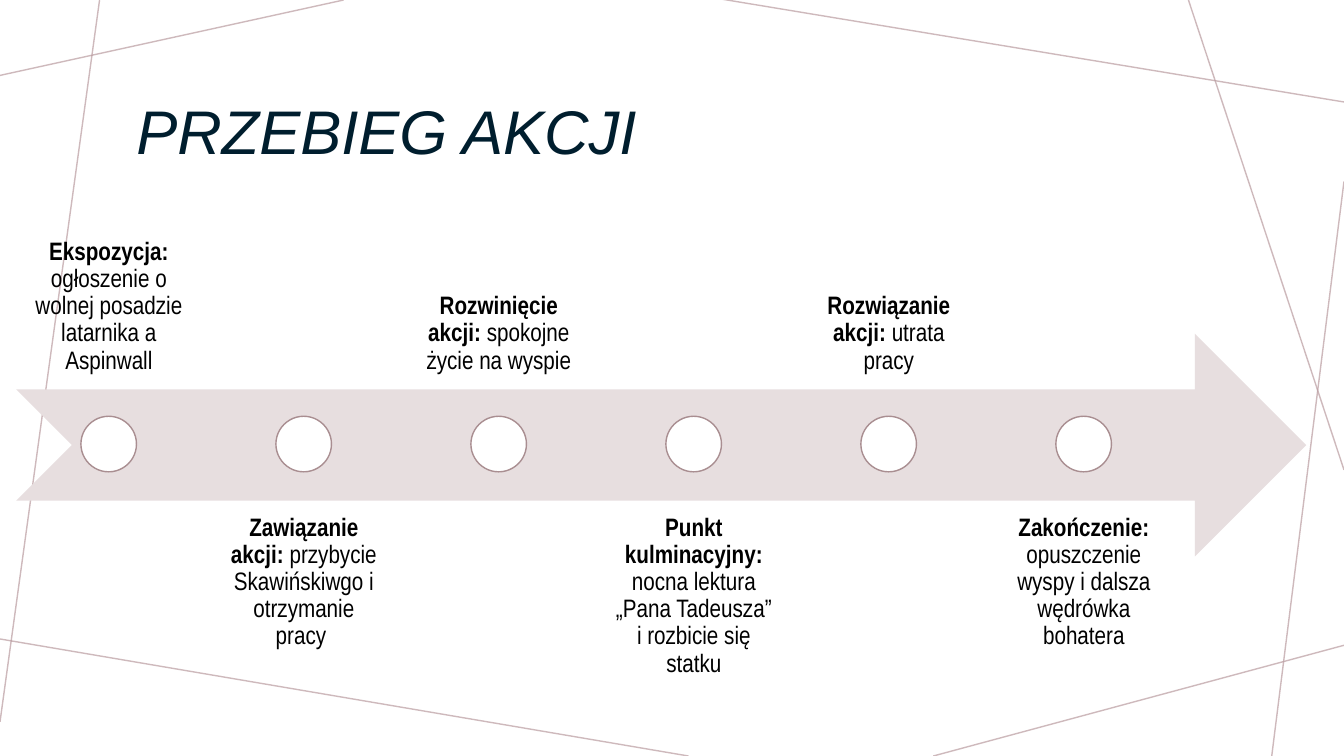
from lxml import etree
from pptx import Presentation
from pptx.dml.color import RGBColor
from pptx.enum.shapes import MSO_CONNECTOR, MSO_SHAPE
from pptx.enum.text import MSO_ANCHOR, MSO_AUTO_SIZE, PP_ALIGN
from pptx.oxml.ns import qn
from pptx.util import Cm, Pt

STRAIGHT = MSO_CONNECTOR.STRAIGHT
ARROW, OVAL = MSO_SHAPE.NOTCHED_RIGHT_ARROW, MSO_SHAPE.OVAL
TOP, MIDDLE, BOTTOM = MSO_ANCHOR.TOP, MSO_ANCHOR.MIDDLE, MSO_ANCHOR.BOTTOM
LEFT, CENTER = PP_ALIGN.LEFT, PP_ALIGN.CENTER
NO_FIT = MSO_AUTO_SIZE.NONE

WIDTH, HEIGHT = 33.87, 19.05
PITCH = 4.914
MARGIN = 0.41
BOX_W, BOX_H = 4.67, 5.61
DOT_LEFT, DOT_TOP, DOT_SIZE = 2.04, 10.49, 1.4

BACKGROUND_LINES = [
    (8.66, 0, 0, 1.9),
    (2.51, 0, 0, 18.19),
    (17.35, HEIGHT, -0.13, 16.08),
    (WIDTH, 16.26, 23.52, HEIGHT),
    (WIDTH, 4.57, 32.05, HEIGHT),
    (WIDTH, 11.84, 29.95, 0),
    (WIDTH, 2.57, 18.14, -0.03),
]
STAGES = [
    ("Ekspozycja: ", "ogłoszenie o wolnej posadzie latarnika a Aspinwall"),
    ("Zawiązanie akcji:", " przybycie Skawińskiwgo i otrzymanie pracy "),
    ("Rozwinięcie akcji: ", "spokojne życie na wyspie"),
    ("Punkt kulminacyjny:", " nocna lektura „Pana Tadeusza” i rozbicie się statku"),
    ("Rozwiązanie akcji: ", "utrata pracy"),
    ("Zakończenie: ", "opuszczenie wyspy i dalsza wędrówka bohatera"),
]


def rgb(value):
    """Return the colour for a hex string."""
    return RGBColor.from_string(value)


class SlideBuilder:
    """Holds the style and the current slide, and draws each kind of element."""

    title_font = {"size": Pt(44), "name": "Arial", "italic": True, "bold": False}
    label_font = {"size": Pt(18), "name": "Arial Narrow"}
    title_color, label_color = "001E2E", "000000"
    line_color, arrow_color = "BA9CA0", "E7DEDF"
    dot_color, ring_color = "FFFFFF", "A98E91"

    def __init__(self, prs):
        """Add a title-only slide with a white background."""
        self.s = prs.slides.add_slide(prs.slide_layouts[5])
        fill = self.s.background.fill
        fill.solid()
        fill.fore_color.rgb = rgb("FFFFFF")

    def run(self, p, text, color, **formats):
        """Add a formatted run to a paragraph."""
        r = p.add_run()
        r.text = text
        for name, value in formats.items():
            setattr(r.font, name, value)
        r.font.color.rgb = rgb(color)

    def paragraph(self, tf, align, anchor, inset=None):
        """Format a text frame and return its first paragraph."""
        formats = {"word_wrap": True, "auto_size": NO_FIT, "vertical_anchor": anchor}
        if inset is not None:
            for side in ("left", "top", "right", "bottom"):
                formats[f"margin_{side}"] = Cm(inset)
        for name, value in formats.items():
            setattr(tf, name, value)
        p = tf.paragraphs[0]
        p.alignment, p.line_spacing = align, 0.9
        return p

    def title(self, text, *box):
        """Move and fill the title placeholder."""
        sp = self.s.shapes.title
        for name, value in zip(("left", "top", "width", "height"), box):
            setattr(sp, name, Cm(value))
        p = self.paragraph(sp.text_frame, LEFT, MIDDLE)
        self.run(p, text, self.title_color, **self.title_font)

    def line(self, *ends):
        """Draw a thin translucent line."""
        cxn = self.s.shapes.add_connector(STRAIGHT, *map(Cm, ends))
        cxn.line.width = Pt(1)
        cxn.line.color.rgb = rgb(self.line_color)
        sp_pr = cxn._element.spPr
        color = next(sp_pr.iter(qn("a:srgbClr")))
        etree.SubElement(color, qn("a:alpha"), val="70000")
        etree.SubElement(sp_pr, qn("a:effectLst"))

    def shape(self, kind, fill, outline, *box):
        """Draw a filled preset shape with an optional outline."""
        sp = self.s.shapes.add_shape(kind, *map(Cm, box))
        sp.shadow.inherit = False
        sp.fill.solid()
        sp.fill.fore_color.rgb = rgb(fill)
        if outline:
            sp.line.color.rgb = rgb(outline)
            sp.line.width = Pt(1)
        else:
            sp.line.fill.background()

    def label(self, heading, body, anchor, *box):
        """Add a centred text with a bold heading."""
        sp = self.s.shapes.add_textbox(*map(Cm, box))
        p = self.paragraph(sp.text_frame, CENTER, anchor, 0.36)
        for text, bold in ((heading, True), (body, False)):
            self.run(p, text, self.label_color, bold=bold, **self.label_font)


def main():
    """Build the timeline slide and save it."""
    prs = Presentation()
    prs.slide_width, prs.slide_height = Cm(WIDTH), Cm(HEIGHT)
    b = SlideBuilder(prs)
    for ends in BACKGROUND_LINES:
        b.line(*ends)
    b.title("PRZEBIEG AKCJI", 3.18, 1.47, 27.51, 3.84)
    b.shape(ARROW, b.arrow_color, None, MARGIN, 8.41, 32.51, BOX_H)
    for i, (heading, body) in enumerate(STAGES):
        offset = i * PITCH
        anchor, top = (TOP, 12.6) if i % 2 else (BOTTOM, 4.19)
        b.label(heading, body, anchor, MARGIN + offset, top, BOX_W, BOX_H)
        b.shape(OVAL, b.dot_color, b.ring_color,
                DOT_LEFT + offset, DOT_TOP, DOT_SIZE, DOT_SIZE)
    prs.save("out.pptx")


if __name__ == "__main__":
    main()
